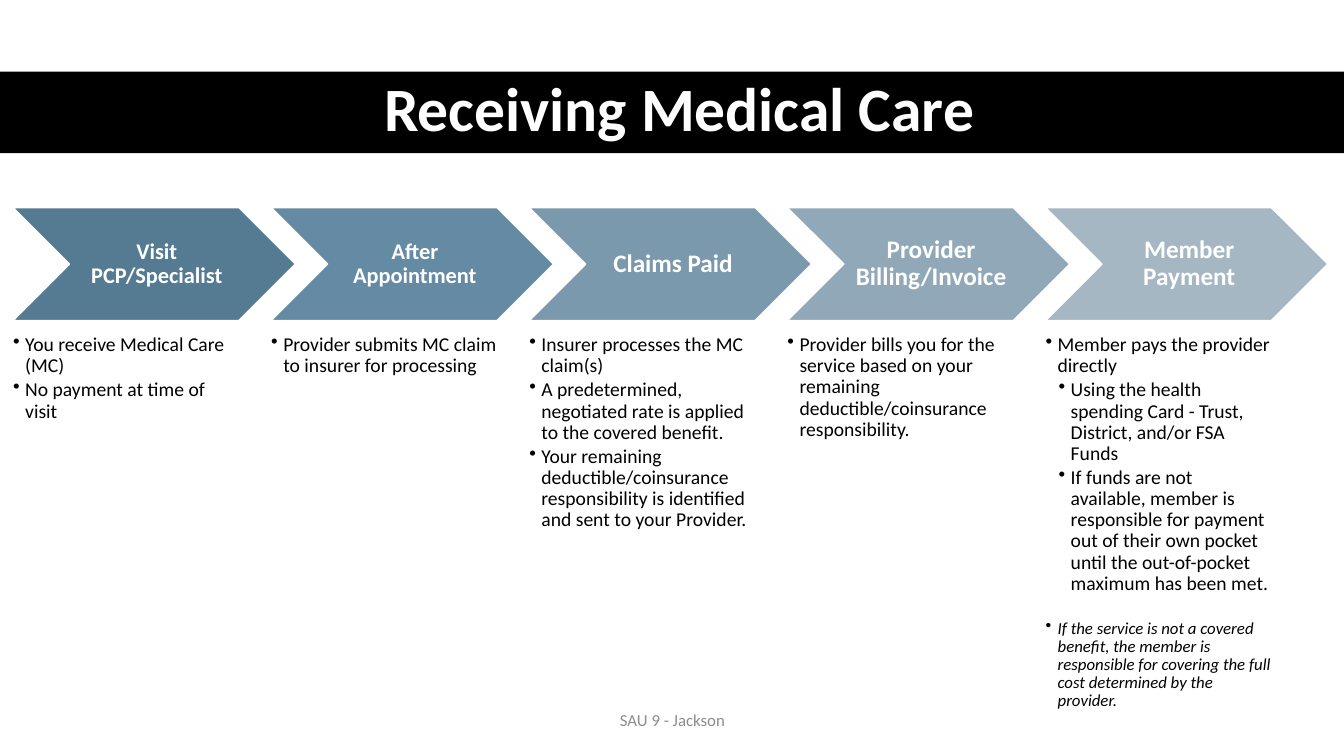
"""Builds the slide on the five steps of receiving medical care."""
from lxml import etree
from pptx import Presentation
from pptx import util as u
from pptx.dml.color import RGBColor
from pptx.enum import shapes, text
from pptx.oxml import ns

FONT = "Calibri"
COLORS = {"black": "000000", "white": "FFFFFF", "gray": "8C8C8C"}
LEFT, STEP = 0.13, 2.56
STEPS = [
    ("Visit PCP/Specialist", 16, "547B92", [
        (0, "You receive Medical Care (MC)"),
        (0, "No payment at time of visit")]),
    ("After Appointment", 16, "658AA3", [
        (0, "Provider submits MC claim to insurer for processing")]),
    ("Claims Paid", 18, "7B99AD", [
        (0, "Insurer processes the MC claim(s)"),
        (0, "A predetermined, negotiated rate is applied to the covered benefit."),
        (0, "Your remaining deductible/coinsurance responsibility is identified "
            "and sent to your Provider.")]),
    ("Provider Billing/Invoice", 18, "91A8B8", [
        (0, "Provider bills you for the service based on your remaining "
            "deductible/coinsurance responsibility.")]),
    ("Member Payment", 18, "A6B7C4", [
        (0, "Member pays the provider directly"),
        (1, "Using the health spending Card - Trust, District, and/or FSA Funds"),
        (1, "If funds are not available, member is responsible for payment out of "
            "their own pocket until the out-of-pocket maximum has been met.")]),
]
NOTE = ("If the service is not a covered benefit, the member is responsible for "
        "covering the full cost determined by the provider.")


def place(shape, box):
    """Move a shape to a box given in inches."""
    shape.left, shape.top, shape.width, shape.height = map(u.Inches, box)


def style(para, size, color, bold=False, italic=False):
    """Format the runs of a paragraph."""
    for run in para.runs:
        font = run.font
        font.name, font.size = FONT, u.Pt(size)
        font.bold, font.italic = bold, italic
        font.color.rgb = RGBColor.from_string(color)


def add_form(slide, kind, box, fill, line=None):
    """Add a filled preset shape without a shadow."""
    form = slide.shapes.add_shape(kind, *map(u.Inches, box))
    form.shadow.inherit = False
    form.fill.solid()
    form.fill.fore_color.rgb = RGBColor.from_string(fill)
    if line:
        form.line.color.rgb = RGBColor.from_string(line)
        form.line.width = u.Pt(1)
    else:
        form.line.fill.background()
    return form


def add_frame(slide, box, left=0, rest=0):
    """Add a wrapping text box with the given insets and return its frame."""
    frame = slide.shapes.add_textbox(*map(u.Inches, box)).text_frame
    frame.word_wrap = True
    frame.margin_left = u.Inches(left)
    frame.margin_top = frame.margin_right = frame.margin_bottom = u.Inches(rest)
    return frame


def add_label(slide, box, words, size, color, bold=False, left=0, rest=0):
    """Add one centred line of text in the middle of a box."""
    frame = add_frame(slide, box, left, rest)
    frame.vertical_anchor = text.MSO_ANCHOR.MIDDLE
    para = frame.paragraphs[0]
    para.text = words
    para.alignment = text.PP_ALIGN.CENTER
    para.line_spacing = 0.9
    style(para, size, color, bold)


def add_item(frame, level, words, size=14, italic=False):
    """Add a bulleted paragraph to a frame."""
    para = frame.add_paragraph() if frame.text else frame.paragraphs[0]
    para.text = words
    para.level = level + 1
    para.line_spacing = 0.9
    para.space_after = u.Pt(2)
    props = para._p.get_or_add_pPr()
    props.set("marL", str(u.Inches(0.12 + 0.13 * level)))
    props.set("indent", str(u.Inches(-0.12)))
    etree.SubElement(props, ns.qn("a:buChar")).set("char", "•")
    style(para, size, COLORS["black"], italic=italic)
    return para


def add_title(slide, words):
    """Fill the title and lay a black band behind it."""
    title = slide.shapes.title
    place(title, (0.61, 0.7, 12.26, 0.81))
    title.text_frame.text = words
    title.text_frame.vertical_anchor = text.MSO_ANCHOR.MIDDLE
    para = title.text_frame.paragraphs[0]
    para.alignment = text.PP_ALIGN.CENTER
    para.line_spacing = 0.9
    style(para, 44, COLORS["white"], bold=True)
    band = add_form(slide, shapes.MSO_SHAPE.RECTANGLE,
                    (0, 0.71, 13.33, 0.81), COLORS["black"])
    title._element.addprevious(band._element)


def add_step(slide, left, head, size, fill, items):
    """Add a chevron with its heading and list, and return the list frame."""
    add_form(slide, shapes.MSO_SHAPE.CHEVRON, (left, 2.06, 2.8, 1.12),
             fill, COLORS["white"])
    add_label(slide, (left + 0.56, 2.06, 1.68, 1.12), head, size,
              COLORS["white"], True, 0.07, 0.02)
    frame = add_frame(slide, (left, 3.32, 2.24, 3.62))
    for level, words in items:
        add_item(frame, level, words)
    return frame


def main():
    """Build and save the slide."""
    deck = Presentation()
    deck.slide_width, deck.slide_height = u.Inches(13.33), u.Inches(7.5)
    slide = deck.slides.add_slide(deck.slide_layouts[5])
    add_title(slide, "Receiving Medical Care")
    for i, step in enumerate(STEPS):
        frame = add_step(slide, LEFT + i * STEP, *step)
    note = add_item(frame, 0, NOTE, 12, True)
    note.space_before = u.Pt(16)
    add_label(slide, (4.42, 6.95, 4.5, 0.4), "SAU 9 - Jackson", 12, COLORS["gray"])
    deck.save("out.pptx")


if __name__ == "__main__":
    main()
